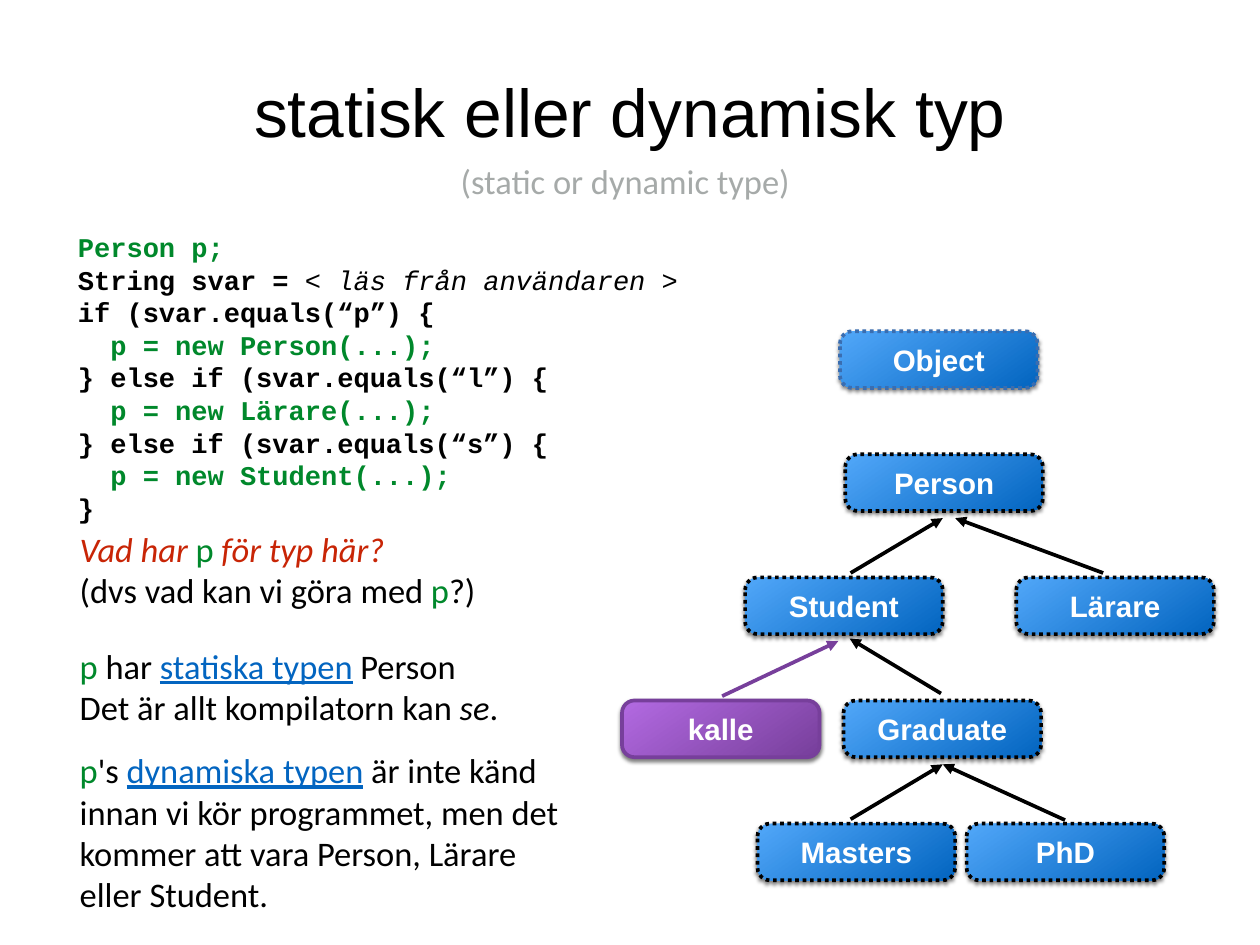
from dataclasses import dataclass

from lxml import etree
from pptx import Presentation
from pptx.dml.color import RGBColor
from pptx.enum.dml import MSO_LINE
from pptx.enum.shapes import MSO_CONNECTOR, MSO_SHAPE
from pptx.enum.text import MSO_ANCHOR, PP_ALIGN
from pptx.oxml.ns import qn
from pptx.util import Inches, Pt

ROUNDED = MSO_SHAPE.ROUNDED_RECTANGLE
STRAIGHT = MSO_CONNECTOR.STRAIGHT
DOTTED, SOLID = MSO_LINE.ROUND_DOT, MSO_LINE.SOLID
CENTER, LEFT = PP_ALIGN.CENTER, PP_ALIGN.LEFT
MIDDLE, TOP = MSO_ANCHOR.MIDDLE, MSO_ANCHOR.TOP

COLORS = {
    "black": "000000", "white": "FFFFFF", "gray": "A6AAA9",
    "green": "00882B", "red": "C82506", "link": "0365C0",
    "sky": "51A7F9", "blue": "0365C0", "outline": "3A6DB0",
    "lilac": "B36AE2", "purple": "773F9B",
}
BOX_WIDTH, BOX_HEIGHT = 2.23, 0.64
FIRST_ROW, ROW_PITCH = 3.74, 1.39


@dataclass
class Span:
    text: str
    color: str = "black"
    bold: bool = False
    italic: bool = False
    underline: bool = False


@dataclass
class TextBlock:
    left: float
    top: float
    width: float
    height: float
    font: str
    size: float
    paras: list[list[Span]]
    align: PP_ALIGN = LEFT
    anchor: MSO_ANCHOR = TOP
    spacing: float | None = None


@dataclass
class ClassBox:
    name: str
    left: float
    row: int
    light: str = "sky"
    dark: str = "blue"
    line: str = "black"
    dash: MSO_LINE = DOTTED


@dataclass
class Arrow:
    start: tuple[float, float]
    end: tuple[float, float]
    color: str = "black"


def rgb(name: str) -> RGBColor:
    return RGBColor.from_string(COLORS[name])


def code(text: str, color: str = "black") -> list[Span]:
    return [Span(text, color, bold=True)]


def write_paras(frame, block: TextBlock) -> None:
    frame.word_wrap = True
    frame.vertical_anchor = block.anchor
    frame.margin_left = frame.margin_right = 0
    frame.margin_top = frame.margin_bottom = 0
    for index, spans in enumerate(block.paras):
        para = frame.add_paragraph() if index else frame.paragraphs[0]
        para.alignment = block.align
        if block.spacing:
            para.line_spacing = Pt(block.spacing)
        for span in spans:
            run = para.add_run()
            run.text = span.text
            font = run.font
            font.name, font.size = block.font, Pt(block.size)
            font.bold, font.italic = span.bold, span.italic
            font.underline = span.underline
            font.color.rgb = rgb(span.color)


def draw_text(page, block: TextBlock) -> None:
    box = page.shapes.add_textbox(Inches(block.left), Inches(block.top),
                                  Inches(block.width), Inches(block.height))
    write_paras(box.text_frame, block)


def add_soft_shadow(shape) -> None:
    shape.shadow.inherit = False
    effects = shape._element.spPr.find(qn("a:effectLst"))
    shadow = etree.SubElement(effects, qn("a:outerShdw"), blurRad=str(Pt(3)),
                              dist=str(Pt(2)), dir="5400000", rotWithShape="0")
    color = etree.SubElement(shadow, qn("a:srgbClr"), val=COLORS["black"])
    etree.SubElement(color, qn("a:alpha"), val="50000")


def draw_class(page, item: ClassBox) -> None:
    top = FIRST_ROW + item.row * ROW_PITCH
    box = page.shapes.add_shape(ROUNDED, Inches(item.left), Inches(top),
                                Inches(BOX_WIDTH), Inches(BOX_HEIGHT))
    box.adjustments[0] = 0.22
    box.fill.gradient()
    box.fill.gradient_angle = 305
    for stop, name, position in zip(box.fill.gradient_stops,
                                    (item.light, item.dark), (0, 1)):
        stop.color.rgb = rgb(name)
        stop.position = position
    box.line.color.rgb = rgb(item.line)
    box.line.width = Pt(3)
    box.line.dash_style = item.dash
    add_soft_shadow(box)
    label = [[Span(item.name, "white", bold=True)]]
    write_paras(box.text_frame,
                TextBlock(item.left, top, BOX_WIDTH, BOX_HEIGHT, "Arial", 24,
                          label, CENTER, MIDDLE))


def draw_arrow(page, arrow: Arrow) -> None:
    ends = [Inches(value) for value in arrow.start + arrow.end]
    connector = page.shapes.add_connector(STRAIGHT, *ends)
    connector.line.color.rgb = rgb(arrow.color)
    connector.line.width = Pt(3)
    properties = connector._element.spPr
    etree.SubElement(properties.find(qn("a:ln")), qn("a:tailEnd"), type="triangle")
    etree.SubElement(properties, qn("a:effectLst"))


TEXTS = [
    TextBlock(0.07, 0.07, 14.08, 2.36, "Arial", 55,
              [[Span("statisk eller dynamisk typ")]], CENTER, MIDDLE),
    TextBlock(5.2, 1.81, 8.9, 0.56, "Calibri", 28,
              [[Span("(static or dynamic type)", "gray")]]),
    TextBlock(0.88, 2.6, 11.6, 3.67, "Courier New", 22, [
        code("Person p;", "green"),
        code("String svar = ") + [Span("< läs från användaren >", italic=True)],
        code("if (svar.equals(“p”) {"),
        code("  p = new Person(...);", "green"),
        code("} else if (svar.equals(“l”) {"),
        code("  p = new Lärare(...);", "green"),
        code("} else if (svar.equals(“s”) {"),
        code("  p = new Student(...);", "green"),
        code("}"),
    ], spacing=26.5),
    TextBlock(0.9, 5.96, 5.57, 1.0, "Calibri", 28, [
        [Span("Vad har ", "red", italic=True), Span("p", "green"),
         Span(" för typ här?", "red", italic=True)],
        [Span("(dvs vad kan vi göra med "), Span("p", "green"), Span("?)")],
    ]),
    TextBlock(0.9, 7.28, 5.57, 1.01, "Calibri", 28, [
        [Span("p", "green"), Span(" har "),
         Span("statiska typen", "link", underline=True), Span(" Person")],
        [Span("Det är allt kompilatorn kan "), Span("se", italic=True), Span(".")],
    ]),
    TextBlock(0.9, 8.46, 5.57, 1.93, "Calibri", 28, [
        [Span("p", "green"), Span("'s "),
         Span("dynamiska typen", "link", underline=True),
         Span(" är inte känd innan vi kör programmet, men det kommer att vara "
              "Person, Lärare eller Student.")],
    ]),
]
CLASSES = [
    ClassBox("Object", 9.48, 0, line="outline"),
    ClassBox("Person", 9.54, 1),
    ClassBox("Student", 8.41, 2),
    ClassBox("Lärare", 11.47, 2),
    ClassBox("kalle", 7.02, 3, "lilac", "purple", "purple", SOLID),
    ClassBox("Graduate", 9.52, 3),
    ClassBox("Masters", 8.55, 4),
    ClassBox("PhD", 10.91, 4),
]
ARROWS = [
    Arrow((9.6, 6.47), (10.64, 5.85)),
    Arrow((12.45, 6.47), (10.78, 5.85)),
    Arrow((8.15, 7.86), (9.46, 7.24), "purple"),
    Arrow((10.62, 7.83), (9.59, 7.21)),
    Arrow((9.6, 9.25), (10.64, 8.63)),
    Arrow((12.02, 9.26), (10.64, 8.63)),
]


def main() -> None:
    deck = Presentation()
    deck.slide_width, deck.slide_height = Inches(14.22), Inches(10.67)
    page = deck.slides.add_slide(deck.slide_layouts[6])
    for item in CLASSES:
        draw_class(page, item)
    for arrow in ARROWS:
        draw_arrow(page, arrow)
    for block in TEXTS:
        draw_text(page, block)
    deck.save("out.pptx")


if __name__ == "__main__":
    main()
